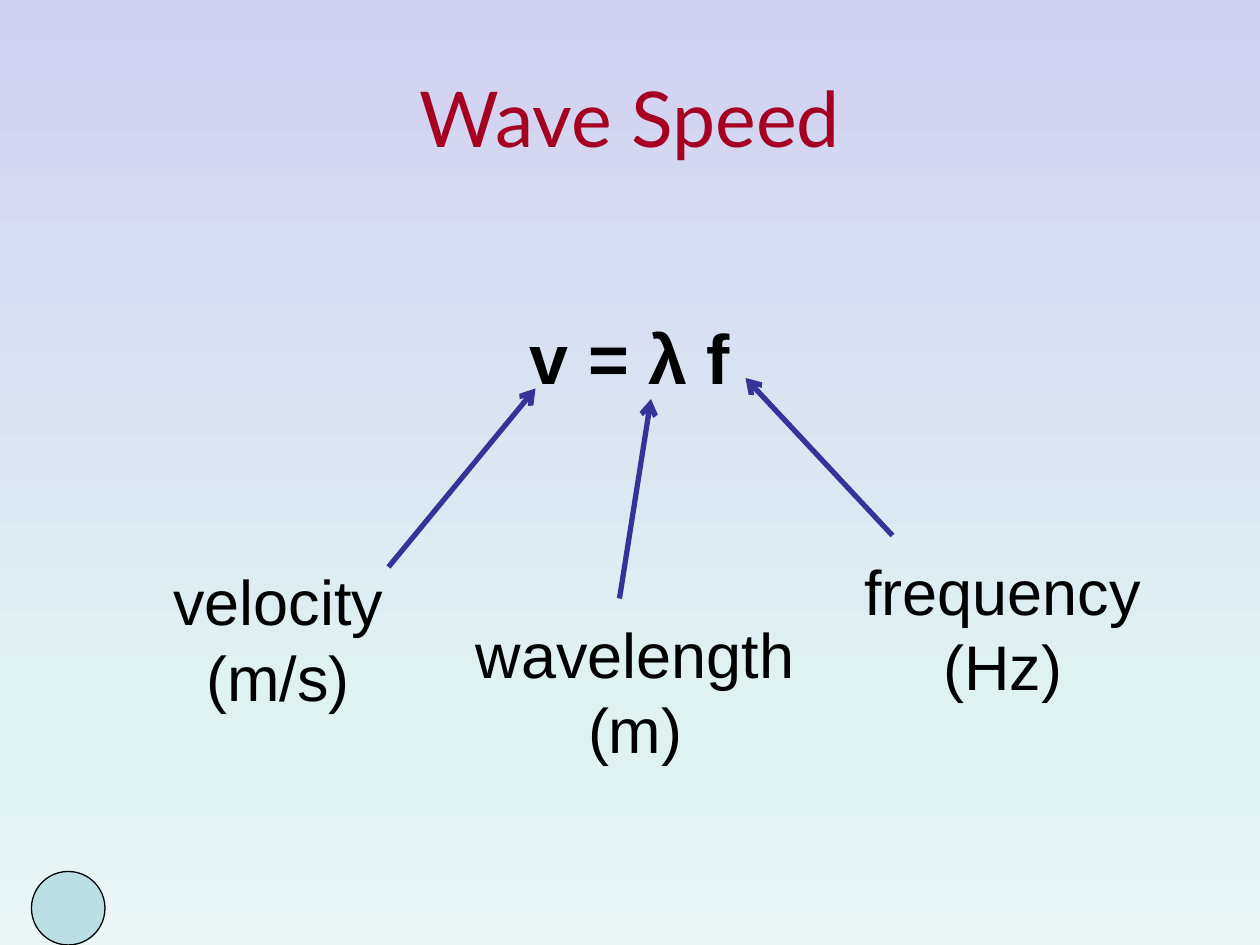
from copy import deepcopy

from lxml import etree
from pptx import Presentation, util as u
from pptx.dml.color import RGBColor
from pptx.enum import shapes, text
from pptx.oxml.ns import qn

# The slide is a grid of 120 columns by 90 rows, twelve to the inch
CELL = u.Inches(1) // 12
COLUMNS, ROWS = 120, 90

BACKGROUND_STOPS = [(0, "D1D1F0"), (74, "E0F1F2"), (83, "E0F1F2"), (100, "EBF6F7")]

# Label, its box, and its arrow from and to
TERMS = [
    ("velocity (m/s)", (11, 53, 31, 15.6), (37, 54), (51, 37)),
    ("wavelength (m)", (44, 58, 33, 15.6), (59, 57), (62, 38)),
    ("frequency (Hz)", (80, 52, 31, 15.6), (85, 51), (71, 36)),
]


def color(value):
    return RGBColor.from_string(value)


def grid(*cells):
    return [round(cell * CELL) for cell in cells]


def write(shape, content, font_name, size, font_color, bold=False,
          anchor=text.MSO_ANCHOR.TOP):
    frame = shape.text_frame
    frame.text = content
    frame.word_wrap = True
    frame.vertical_anchor = anchor
    paragraph = frame.paragraphs[0]
    paragraph.alignment = text.PP_ALIGN.CENTER
    font = paragraph.font
    font.name, font.size, font.bold = font_name, u.Pt(size), bold
    font.color.rgb = color(font_color)


def paint_background(slide):
    fill = slide.background.fill
    fill.gradient()
    fill.gradient_angle = 270
    stop_list = slide.background._cSld.find(".//" + qn("a:gsLst"))
    template = deepcopy(stop_list[0])
    for stop in list(stop_list):
        stop_list.remove(stop)
    for _ in BACKGROUND_STOPS:
        stop_list.append(deepcopy(template))
    for stop, (position, value) in zip(fill.gradient_stops, BACKGROUND_STOPS):
        stop.position = position / 100
        stop.color.rgb = color(value)


def place_title(slide, box):
    title = slide.shapes.title
    title.left, title.top, title.width, title.height = grid(*box)
    write(title, "Wave Speed", "Lato", 44, "A50021", anchor=text.MSO_ANCHOR.MIDDLE)


def add_equation(slide, box):
    equation = slide.shapes.add_textbox(*grid(*box))
    write(equation, "v = λ f", "Arial", 40, "000000", bold=True,
          anchor=text.MSO_ANCHOR.MIDDLE)


def add_arrow(slide, start, end):
    arrow = slide.shapes.add_connector(
        shapes.MSO_CONNECTOR.STRAIGHT, *grid(*start, *end))
    arrow.line.color.rgb = color("333399")
    arrow.line.width = u.Pt(3)
    properties = arrow.line._get_or_add_ln()
    etree.SubElement(properties, qn("a:tailEnd"), type="arrow")
    etree.SubElement(arrow._element.spPr, qn("a:effectLst"))


def add_label(slide, content, box):
    label = slide.shapes.add_textbox(*grid(*box))
    write(label, content, "Arial", 36, "000000")


def add_corner_circle(slide, box):
    circle = slide.shapes.add_shape(shapes.MSO_SHAPE.OVAL, *grid(*box))
    circle.shadow.inherit = False
    circle.fill.solid()
    circle.fill.fore_color.rgb = color("BBE0E3")
    circle.line.color.rgb = color("000000")
    circle.line.width = u.Pt(0.75)


def main():
    presentation = Presentation()
    presentation.slide_width, presentation.slide_height = grid(COLUMNS, ROWS)
    slide = presentation.slides.add_slide(
        presentation.slide_layouts.get_by_name("Title Only"))

    paint_background(slide)
    place_title(slide, (6, 3.6, 108, 15))
    add_equation(slide, (6, 29, 108, 10))

    # Each term of the equation is named and pointed at
    for _, _, start, end in TERMS:
        add_arrow(slide, start, end)
    for content, box, _, _ in TERMS:
        add_label(slide, content, box)

    add_corner_circle(slide, (3, 83, 7, 7))
    presentation.save("out.pptx")


if __name__ == "__main__":
    main()
